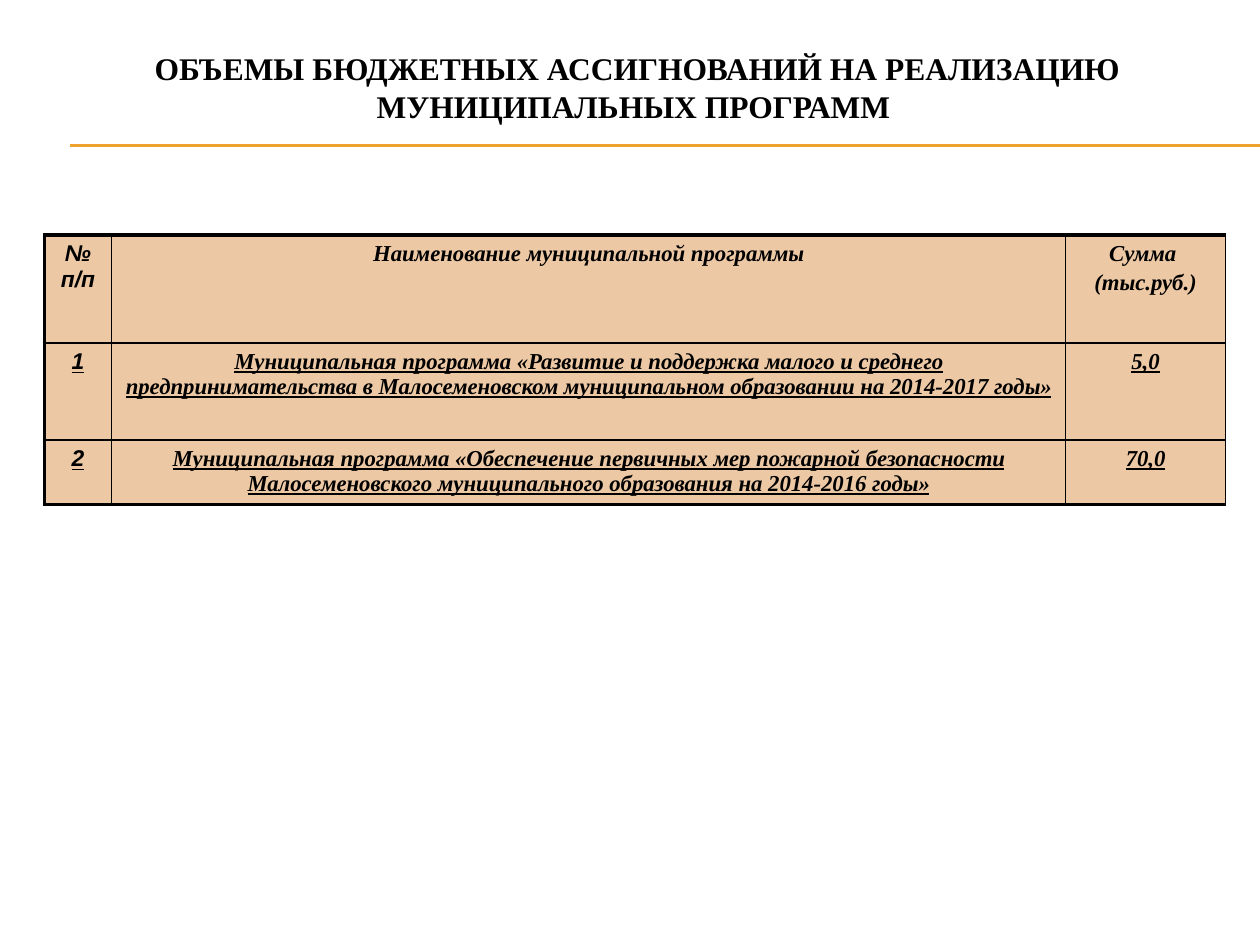
from lxml import etree
from pptx import Presentation
from pptx.dml.color import RGBColor
from pptx.enum.shapes import MSO_CONNECTOR
from pptx.enum.text import MSO_ANCHOR, PP_ALIGN
from pptx.oxml.ns import qn
from pptx.util import Pt

CENTER = PP_ALIGN.CENTER
MIDDLE = MSO_ANCHOR.MIDDLE
STRAIGHT = MSO_CONNECTOR.STRAIGHT

BLACK = RGBColor(0x00, 0x00, 0x00)
ORANGE = RGBColor(0xF0, 0xA2, 0x2E)
PEACH = RGBColor(0xEC, 0xC8, 0xA4)

SERIF, SANS = "Times New Roman", "Arial"
THICK, THIN = 2.25, 1

TITLE = "ОБЪЕМЫ БЮДЖЕТНЫХ АССИГНОВАНИЙ НА РЕАЛИЗАЦИЮ МУНИЦИПАЛЬНЫХ ПРОГРАММ "
PROGRAMS = [
    ("№ п/п", "Наименование муниципальной программы", "Сумма \n(тыс.руб.)"),
    ("1", "Муниципальная программа «Развитие и поддержка малого и среднего "
          "предпринимательства в Малосеменовском муниципальном образовании "
          "на 2014-2017 годы»", "5,0"),
    ("2", "Муниципальная программа «Обеспечение первичных мер пожарной "
          "безопасности Малосеменовского муниципального образования "
          "на 2014-2016 годы»", "70,0"),
]
COLUMN_WIDTHS = (38.3, 545.2, 91.5)
ROW_HEIGHTS = (61.8, 55.4, 36.8)


def format_paragraph(paragraph, font_name, size):
    paragraph.alignment = CENTER
    for run in paragraph.runs:
        run.font.name = font_name
        run.font.size = Pt(size)
        run.font.bold = True
        run.font.color.rgb = BLACK


def add_title(slide, left, top, width, height):
    title = slide.shapes.title
    title.left, title.top = Pt(left), Pt(top)
    title.width, title.height = Pt(width), Pt(height)
    title.text_frame.text = TITLE
    title.text_frame.vertical_anchor = MIDDLE
    format_paragraph(title.text_frame.paragraphs[0], SERIF, 18)


def add_rules(slide, left, top, width, gap):
    for y in (top, top + gap):
        rule = slide.shapes.add_connector(
            STRAIGHT, Pt(left), Pt(y), Pt(left + width), Pt(y))
        rule.line.color.rgb = ORANGE
        rule.line.width = Pt(0.75)
        etree.SubElement(rule._element.spPr, qn("a:effectLst"))


def set_borders(cell, widths):
    properties = cell._tc.get_or_add_tcPr()
    for position, (side, width) in enumerate(widths.items()):
        border = etree.Element(qn(f"a:ln{side}"), w=str(Pt(width)))
        fill = etree.SubElement(border, qn("a:solidFill"))
        etree.SubElement(fill, qn("a:srgbClr"), val=str(BLACK))
        properties.insert(position, border)


def fill_cell(cell, text, row, column):
    cell.fill.solid()
    cell.fill.fore_color.rgb = PEACH
    cell.text_frame.text = text
    for paragraph in cell.text_frame.paragraphs:
        format_paragraph(paragraph, SANS if column == 0 else SERIF, 13)
        paragraph.space_before = Pt(2.6)
        for run in paragraph.runs:
            run.font.italic = True
            run.font.underline = row > 0
    set_borders(cell, {
        "L": THICK if column == 0 else THIN,
        "R": THIN,
        "T": THICK if row == 0 else THIN,
        "B": THICK if row == len(PROGRAMS) - 1 else THIN,
    })


def add_program_table(slide, left, top):
    table = slide.shapes.add_table(
        len(ROW_HEIGHTS), len(COLUMN_WIDTHS), Pt(left), Pt(top),
        Pt(sum(COLUMN_WIDTHS)), Pt(sum(ROW_HEIGHTS))).table
    table.first_row = table.horz_banding = False
    for column, width in zip(table.columns, COLUMN_WIDTHS):
        column.width = Pt(width)
    for row, height in zip(table.rows, ROW_HEIGHTS):
        row.height = Pt(height)
    for row, program in enumerate(PROGRAMS):
        for column, text in enumerate(program):
            fill_cell(table.cell(row, column), text, row, column)


def main():
    presentation = Presentation()
    presentation.slide_width, presentation.slide_height = Pt(720), Pt(540)
    slide = presentation.slides.add_slide(presentation.slide_layouts[5])

    # Heading with the double rule below it
    add_title(slide, 22.3, 16.6, 684, 66.2)
    add_rules(slide, 40.3, 82.8, 679.7, 0.6)

    # Programmes and their amounts
    add_program_table(slide, 25.4, 134.2)

    presentation.save("out.pptx")


if __name__ == "__main__":
    main()
